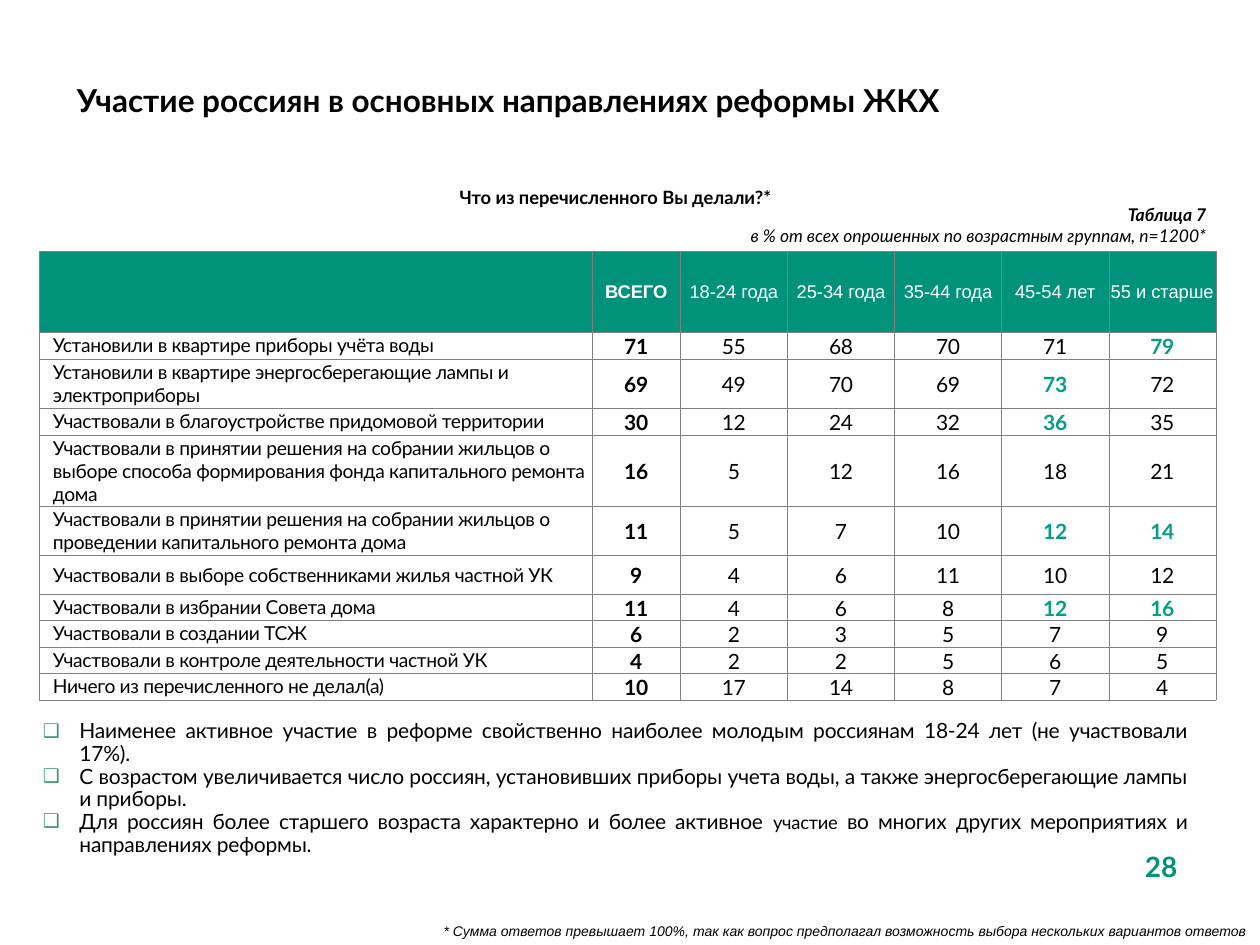
from dataclasses import dataclass

from lxml.etree import SubElement as Sub
from pptx import Presentation
from pptx.dml.color import RGBColor as Rgb
from pptx.enum.text import MSO_ANCHOR as Anchor, MSO_AUTO_SIZE as Fit, PP_ALIGN as Align
from pptx.oxml.ns import qn
from pptx.util import Inches, Pt


@dataclass(frozen=True)
class Theme:
    main: str = "Lato"
    plain: str = "Arial"
    black: str = "000000"
    white: str = "FFFFFF"
    green: str = "00927B"
    mark: str = "059D85"
    bullet: str = "339966"
    grid: str = "808080"
    title: float = 18
    page: float = 16
    body: float = 12
    label: float = 11
    head: float = 10.5
    source: float = 10
    note: float = 8


T = Theme()
HEADS = ["", "ВСЕГО", "18-24 года", "25-34 года", "35-44 года", "45-54 лет", "55 и старше"]
WIDTHS = [4.39, 0.7] + [0.85] * 5
# Label, values, columns to mark, row height
ROWS = [
    ("Установили в квартире приборы учёта воды", [71, 55, 68, 70, 71, 79], [6], 0.2),
    ("Установили в квартире энергосберегающие лампы и электроприборы",
     [69, 49, 70, 69, 73, 72], [5], 0.39),
    ("Участвовали в благоустройстве придомовой территории",
     [30, 12, 24, 32, 36, 35], [5], 0.2),
    ("Участвовали в принятии решения на собрании жильцов о выборе способа "
     "формирования фонда капитального ремонта дома", [16, 5, 12, 16, 18, 21], [], 0.39),
    ("Участвовали в принятии решения на собрании жильцов о проведении "
     "капитального ремонта дома", [11, 5, 7, 10, 12, 14], [5, 6], 0.39),
    ("Участвовали в выборе собственниками жилья частной УК",
     [9, 4, 6, 11, 10, 12], [], 0.31),
    ("Участвовали в избрании Совета дома", [11, 4, 6, 8, 12, 16], [5, 6], 0.2),
    ("Участвовали в создании ТСЖ", [6, 2, 3, 5, 7, 9], [], 0.2),
    ("Участвовали в контроле деятельности частной УК", [4, 2, 2, 5, 6, 5], [], 0.2),
    ("Ничего из перечисленного не делал(а)", [10, 17, 14, 8, 7, 4], [], 0.2),
]
# Each point is a list of runs: text and size
POINTS = [
    [("Наименее активное участие в реформе свойственно наиболее молодым россиянам "
      "18-24 лет (не участвовали 17%).", T.body)],
    [("С возрастом увеличивается число россиян, установивших приборы учета воды, "
      "а также энергосберегающие лампы и приборы.", T.body)],
    [("Для россиян более старшего возраста характерно и более активное ", T.body),
     ("участие", T.head),
     (" во многих других мероприятиях и направлениях реформы.", T.body)],
]


def style(run, size, color=T.black, face=T.main, bold=False, italic=False, gap=0):
    """Format a run; gap is the letter spacing in points."""
    font = run.font
    font.name, font.size, font.bold, font.italic = face, Pt(size), bold, italic
    font.color.rgb = Rgb.from_string(color)
    if gap:
        run._r.get_or_add_rPr().set("spc", str(round(gap * 100)))


def place(shape, x, y, w, h):
    shape.left, shape.top, shape.width, shape.height = map(Inches, (x, y, w, h))


def add_text(slide, box, lines, align, size, bolds, anchor=Anchor.TOP, **look):
    """Add a text box; bolds tells for each line whether it is bold."""
    frame = slide.shapes.add_textbox(*map(Inches, box)).text_frame
    frame.word_wrap = True
    frame.vertical_anchor = anchor
    frame.text = "\n".join(lines)
    for para, bold in zip(frame.paragraphs, bolds):
        para.alignment = align
        style(para.runs[0], size, bold=bold, **look)


def set_title(slide, text):
    title = slide.shapes.title
    place(title, 0.51, 0.44, 7.8, 0.71)
    frame = title.text_frame
    frame.text = text
    frame.auto_size = Fit.NONE
    frame.vertical_anchor = Anchor.MIDDLE
    frame.paragraphs[0].alignment = Align.LEFT
    style(frame.paragraphs[0].runs[0], T.title, bold=True)


def set_bullet(para):
    props = para._p.get_or_add_pPr()
    props.set("marL", str(Inches(0.29)))
    props.set("indent", str(-Inches(0.29)))
    color = Sub(props, qn("a:buClr"))
    Sub(color, qn("a:srgbClr"), val=T.bullet)
    Sub(props, qn("a:buSzPct"), val="90000")
    Sub(props, qn("a:buChar"), char="❑")


def set_points(slide, points):
    body = slide.placeholders[1]
    place(body, 0.24, 5.67, 9.29, 1.02)
    frame = body.text_frame
    frame.auto_size = Fit.NONE
    for i, parts in enumerate(points):
        para = frame.add_paragraph() if i else frame.paragraphs[0]
        set_bullet(para)
        para.alignment = Align.JUSTIFY
        para.line_spacing = 0.9
        para.space_before = Pt(0)
        for text, size in parts:
            run = para.add_run()
            run.text = text
            style(run, size, gap=-0.1)


def set_edges(cell):
    props = cell._tc.get_or_add_tcPr()
    for side in ("lnL", "lnR", "lnT", "lnB"):
        line = Sub(props, qn("a:" + side), w=str(Pt(0.25)))
        fill = Sub(line, qn("a:solidFill"))
        Sub(fill, qn("a:srgbClr"), val=T.grid)


def fill_cell(cell, text, align=Align.CENTER, anchor=Anchor.MIDDLE, back=None, **look):
    cell.margin_left = cell.margin_right = cell.margin_top = Inches(0.01)
    cell.margin_bottom = 0
    cell.vertical_anchor = anchor
    set_edges(cell)
    if back:
        cell.fill.solid()
        cell.fill.fore_color.rgb = Rgb.from_string(back)
    else:
        cell.fill.background()
    cell.text = text
    para = cell.text_frame.paragraphs[0]
    para.alignment = align
    for run in para.runs:
        style(run, **look)


def add_grid(slide):
    heights = [0.65] + [row[3] for row in ROWS]
    box = map(Inches, (0.31, 1.99, sum(WIDTHS), sum(heights)))
    table = slide.shapes.add_table(len(heights), len(WIDTHS), *box).table
    table.first_row = table.horz_banding = False
    for col, width in zip(table.columns, WIDTHS):
        col.width = Inches(width)
    for row, height in zip(table.rows, heights):
        row.height = Inches(height)

    for c, head in enumerate(HEADS):
        fill_cell(table.cell(0, c), head, back=T.green, size=T.head,
                  color=T.white, face=T.plain, bold=c == 1)
    for r, (label, values, marks, height) in enumerate(ROWS, 1):
        cell = table.cell(r, 0)
        anchor = Anchor.MIDDLE if height == 0.31 else Anchor.TOP
        fill_cell(cell, label, Align.LEFT, anchor, size=T.label, gap=-0.2)
        props = cell.text_frame.paragraphs[0]._p.get_or_add_pPr()
        props.set("marL", str(Inches(0.1)))
        for c, value in enumerate(values, 1):
            fill_cell(table.cell(r, c), str(value), size=T.body, gap=-0.2,
                      color=T.mark if c in marks else T.black,
                      bold=c == 1 or c in marks)


def main():
    deck = Presentation()
    deck.slide_width, deck.slide_height = Inches(10), Inches(7.5)
    slide = deck.slides.add_slide(deck.slide_layouts[1])
    set_points(slide, POINTS)
    add_grid(slide)
    set_title(slide, "Участие россиян в основных направлениях реформы ЖКХ")
    add_text(slide, (8.78, 6.69, 0.87, 0.52), ["28"], Align.CENTER, T.page, [True],
             color=T.green)
    add_text(slide, (0.65, 7.27, 9.35, 0.24),
             ["* Сумма ответов превышает 100%, так как вопрос предполагал "
              "возможность выбора нескольких вариантов ответов"],
             Align.RIGHT, T.note, [False], face=T.plain, italic=True)
    add_text(slide, (3.89, 1.57, 5.78, 0.44),
             ["Таблица 7", "в % от всех опрошенных по возрастным группам, n=1200*"],
             Align.RIGHT, T.source, [True, False], italic=True)
    add_text(slide, (0.12, 1.42, 9.53, 0.28), ["Что из перечисленного Вы делали?*"],
             Align.CENTER, T.head, [True], Anchor.BOTTOM)
    deck.save("out.pptx")


if __name__ == "__main__":
    main()
